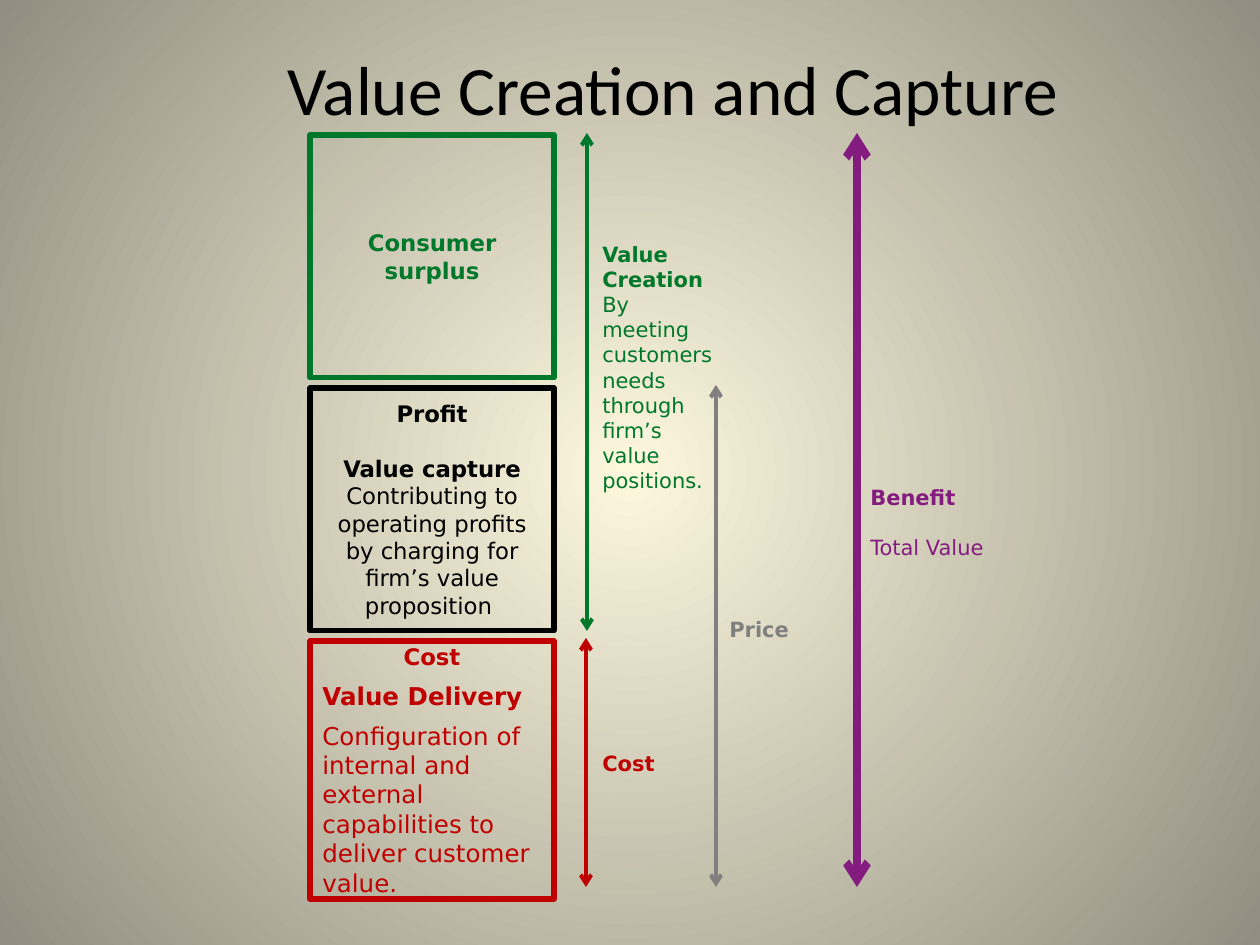
from lxml import etree
from pptx import Presentation
from pptx.dml.color import RGBColor
from pptx.enum.shapes import MSO_CONNECTOR, MSO_SHAPE
from pptx.enum.text import MSO_ANCHOR, MSO_AUTO_SIZE, PP_ALIGN
from pptx.oxml.ns import qn
from pptx.util import Emu, Pt

PX = 914400 // 126
RECT = MSO_SHAPE.RECTANGLE
LINE = MSO_CONNECTOR.STRAIGHT
MIDDLE = MSO_ANCHOR.MIDDLE
CENTER, LEFT = PP_ALIGN.CENTER, PP_ALIGN.LEFT
FIXED = MSO_AUTO_SIZE.NONE

BLACK = RGBColor(0x00, 0x00, 0x00)
GREEN = RGBColor(0x00, 0x78, 0x2C)
RED = RGBColor(0xC0, 0x00, 0x00)
PURPLE = RGBColor(0x84, 0x1C, 0x80)
GRAY = RGBColor(0x80, 0x80, 0x80)
CREAM = RGBColor(0xFC, 0xF7, 0xDD)
STONE = RGBColor(0x91, 0x8E, 0x81)

BOX_X, BOX_Y, BOX_W, BOX_H, STEP = 310, 135, 244, 243, 253


def px(*nums):
    """Turn pixel lengths into EMU."""
    return [Emu(num * PX) for num in nums]


def paint_back(slide):
    """Fill the background with a round gradient."""
    fill = slide.background.fill
    fill.gradient()
    for stop, color in zip(fill.gradient_stops, (CREAM, STONE)):
        stop.color.rgb = color
    grad = slide.element.find(".//" + qn("a:gradFill"))
    for lin in grad.findall(qn("a:lin")):
        grad.remove(lin)
    round_ = etree.SubElement(grad, qn("a:path"), path="circle")
    sides = dict.fromkeys("ltrb", "50000")
    etree.SubElement(round_, qn("a:fillToRect"), **sides)


def write(frame, color, rows):
    """Write rows of text, size, bold, alignment and space before."""
    for i, (text, size, bold, align, gap) in enumerate(rows):
        para = frame.add_paragraph() if i else frame.paragraphs[0]
        para.text = text
        para.alignment = align
        para.space_before = Pt(gap)
        font = para.font
        font.name, font.size, font.bold = "DejaVu Sans", Pt(size), bold
        font.color.rgb = color


def add_title(slide, text):
    """Place and format the slide title."""
    title = slide.shapes.title
    title.left, title.top, title.width, title.height = px(121, 71, 1104, 33)
    frame = title.text_frame
    frame.text = text
    frame.auto_size = FIXED
    frame.vertical_anchor = MIDDLE
    para = frame.paragraphs[0]
    para.alignment = CENTER
    para.font.name, para.font.size = "Calibri", Pt(39.6)
    para.font.color.rgb = BLACK


def add_box(slide, row, color, rows, extra=0):
    """Add an outlined box in the left stack."""
    box = slide.shapes.add_shape(
        RECT, *px(BOX_X, BOX_Y + row * STEP, BOX_W, BOX_H + extra))
    box.shadow.inherit = False
    box.fill.background()
    box.line.color.rgb = color
    box.line.width = Pt(3)
    frame = box.text_frame
    frame.word_wrap = True
    frame.vertical_anchor = MIDDLE
    frame.margin_top = frame.margin_bottom = 0
    write(frame, color, rows)


def add_span(slide, x, top, end, color, width=2.25):
    """Add an upright arrow with two heads."""
    span = slide.shapes.add_connector(LINE, *px(x, top, x, end))
    span.line.color.rgb = color
    span.line.width = Pt(width)
    line = span.line._get_or_add_ln()
    for tag in ("a:headEnd", "a:tailEnd"):
        etree.SubElement(line, qn(tag), type="arrow")
    etree.SubElement(span.element.spPr, qn("a:effectLst"))


def add_note(slide, x, y, w, h, color, rows, wrap=False):
    """Add a label beside an arrow."""
    frame = slide.shapes.add_textbox(*px(x, y, w, h)).text_frame
    frame.word_wrap = wrap
    write(frame, color, rows)


def main():
    """Build and save the slide."""
    deck = Presentation()
    deck.slide_width, deck.slide_height = px(1260, 945)
    slide = deck.slides.add_slide(deck.slide_layouts[5])
    paint_back(slide)
    add_title(slide, "Value Creation and Capture")

    add_box(slide, 0, GREEN, [("Consumer\vsurplus", 13, True, CENTER, 0)])
    add_box(slide, 1, BLACK, [
        ("Profit", 13, True, CENTER, 0),
        ("Value capture", 13, True, CENTER, 15.5),
        ("Contributing to operating profits by charging for "
         "firm’s value proposition ", 13, False, CENTER, 0)])
    add_box(slide, 2, RED, [
        ("Cost", 13, True, CENTER, 0),
        ("Value Delivery", 14, True, LEFT, 6),
        ("Configuration of internal and external capabilities to "
         "deliver customer value.", 14, False, LEFT, 6)], 15)

    add_span(slide, 587, 133, 631, GREEN)
    add_span(slide, 586, 638, 887, RED)
    add_span(slide, 857, 133, 887, PURPLE, 4.5)
    add_span(slide, 716, 385, 887, GRAY)

    add_note(slide, 590, 235, 140, 292, GREEN, [
        ("Value\vCreation", 12, True, LEFT, 0),
        ("By meeting customers needs through firm’s value positions.",
         12, False, LEFT, 0)], True)
    add_note(slide, 590, 744, 78, 38, RED, [("Cost", 12, True, LEFT, 0)])
    add_note(slide, 858, 478, 141, 89, PURPLE, [
        ("Benefit", 12, True, LEFT, 0),
        ("Total Value", 12, False, LEFT, 14.5)])
    add_note(slide, 717, 610, 86, 38, GRAY, [("Price", 12, True, LEFT, 0)])
    deck.save("out.pptx")


if __name__ == "__main__":
    main()
